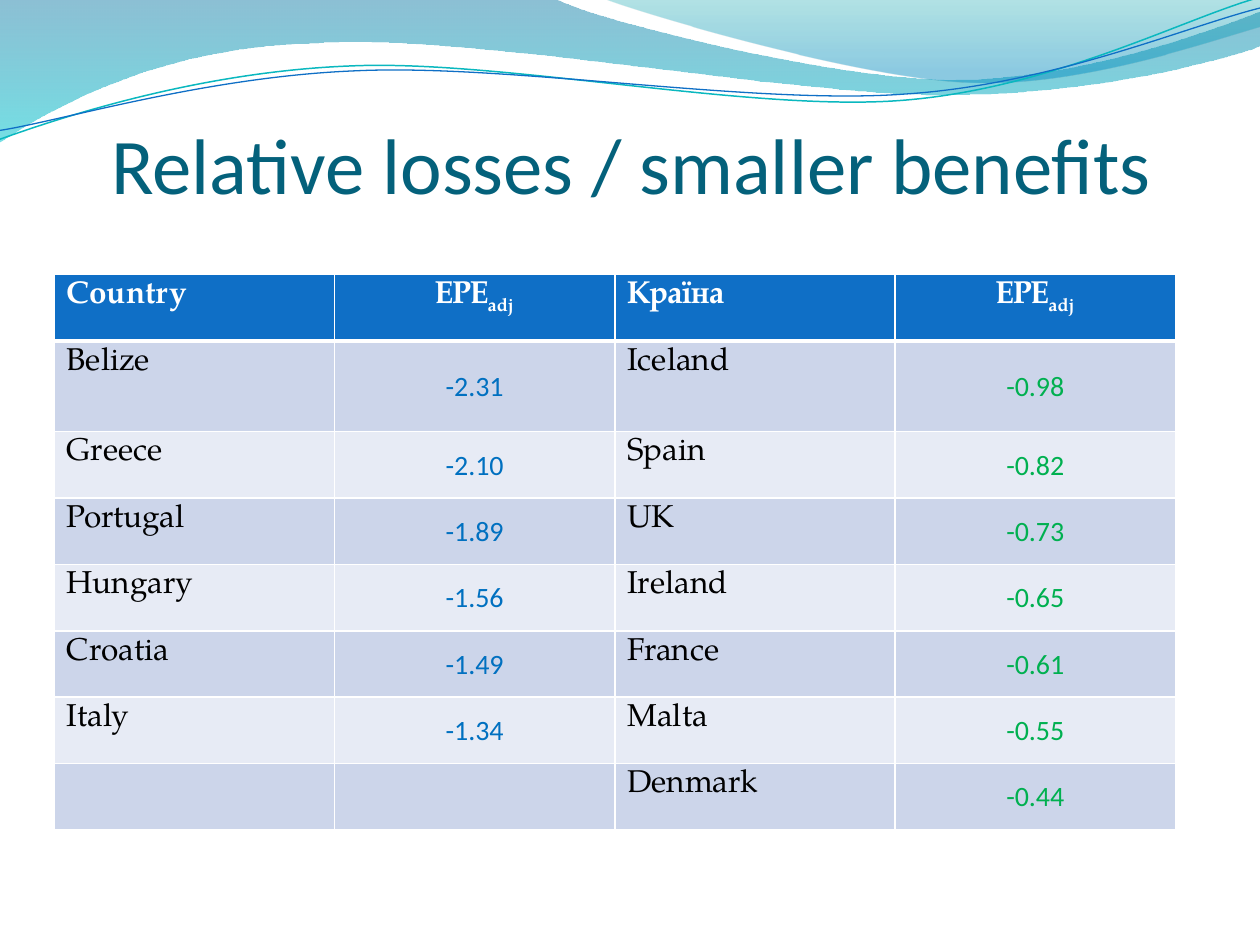
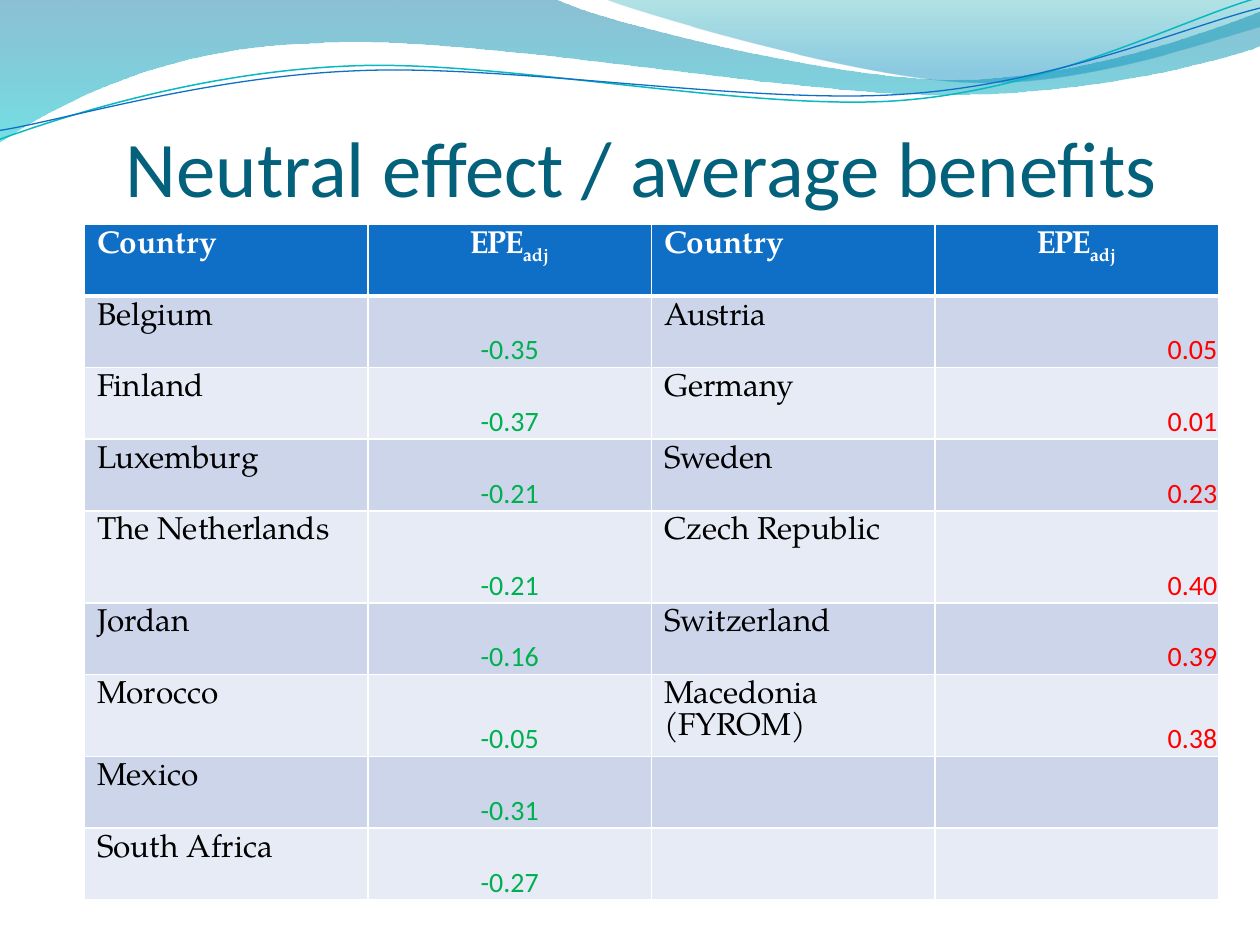
from dataclasses import dataclass

import pptx
import pptx.dml.color
import pptx.enum.text
import pptx.oxml
import pptx.oxml.ns
import pptx.slide
import pptx.table
import pptx.util
from pptx.util import Inches, Pt

ALIGN = pptx.enum.text.PP_ALIGN
ANCHOR = pptx.enum.text.MSO_ANCHOR
qn = pptx.oxml.ns.qn
Point = tuple[float, float]


@dataclass(frozen=True)
class Theme:
    title: str = "04617B"
    header: str = "0F6FC6"
    bands: tuple[str, str] = ("CCD5EA", "E7EBF5")
    white: str = "FFFFFF"
    black: str = "000000"
    blue: str = "0070C0"
    green: str = "00B050"
    red: str = "FF0000"
    teal: str = "0AB8BF"
    sans: str = "Calibri"
    serif: str = "TeX Gyre Pagella"
    title_size: int = 45
    label_size: int = 18
    value_size: int = 16


THEME = Theme()


@dataclass(frozen=True)
class Stop:
    position: float
    colour: str
    opacity: int


@dataclass(frozen=True)
class Wave:
    """Each segment holds one point for a line or three for a cubic curve."""
    start: Point
    segments: list[list[Point]]
    stops: tuple[Stop, ...] = ()
    line: str = ""
    weight: float = 0
    rotation: float = 0


@dataclass(frozen=True)
class Panel:
    """A country column and its value column."""
    heading: str
    colour: str
    align: ALIGN
    rows: list[tuple[str, str]]


@dataclass(frozen=True)
class CountrySlide:
    title: str
    title_box: tuple[float, float, float, float]
    table_box: tuple[float, float, float, float]
    rows_height: float
    tall_row: int
    tall_height: float
    row_count: int
    anchor: ANCHOR
    panels: list[Panel]


# Waves shared by the slides
WAVES = [
    Wave((0, 0), [
        [(4.4, -0.01)],
        [(4.76, 0.17), (6.64, 0.63), (7.58, 0.63)],
        [(8.53, 0.63), (9.58, 0.26), (10, 0.09)],
        [(10.01, 0.36)],
        [(9.83, 0.44), (8.7, 0.76), (7.46, 0.75)],
        [(6.22, 0.75), (3.82, 0.28), (2.57, 0.34)],
        [(1.29, 0.36), (0.46, 0.83), (-0.01, 1.13)],
        [(0, 0)],
    ], stops=(Stop(0, "0074A1", 45), Stop(1, "00C6CF", 55))),
    Wave((4.79, -0.01), [
        [(5.09, 0.11), (6.82, 0.62), (7.69, 0.65)],
        [(8.56, 0.69), (9.61, 0.32), (10, 0.21)],
        [(10, 0)],
        [(4.79, -0.01)],
    ], stops=(Stop(0, "00A1A9", 30), Stop(0.8, "008BBF", 45))),
    Wave((-0.02, 0.87), [
        [(0.47, 0.72), (1.58, 0.41), (2.78, 0.42)],
        [(3.96, 0.42), (5.91, 0.93), (7.12, 0.9)],
        [(8.32, 0.87), (9.4, 0.36), (10, 0.22)],
    ], line=THEME.teal, weight=0.85, rotation=357.3),
    Wave((-0.02, 0.8), [
        [(0.46, 0.75), (1.64, 0.45), (2.83, 0.46)],
        [(4.03, 0.46), (5.96, 0.88), (7.16, 0.85)],
        [(8.35, 0.83), (9.42, 0.42), (10.02, 0.3)],
    ], line=THEME.header, weight=0.75, rotation=357.3),
]

# Slide contents
SLIDES = [
    CountrySlide(
        "Relative losses / smaller benefits", (0.51, 1.15, 9, 0.52),
        (0.43, 2.18, 8.9, 4.41), 4.41, 1, 0.72, 8, ANCHOR.MIDDLE,
        [
            Panel("Country", THEME.blue, ALIGN.CENTER, [
                ("Belize", "-2.31"), ("Greece", "-2.10"), ("Portugal", "-1.89"),
                ("Hungary", "-1.56"), ("Croatia", "-1.49"), ("Italy", "-1.34"),
            ]),
            Panel("Країна", THEME.green, ALIGN.CENTER, [
                ("Iceland", "-0.98"), ("Spain", "-0.82"), ("UK", "-0.73"),
                ("Ireland", "-0.65"), ("France", "-0.61"), ("Malta", "-0.55"),
                ("Denmark", "-0.44"),
            ]),
        ]),
    CountrySlide(
        "Neutral effect / average benefits", (0.59, 0.92, 9, 0.77),
        (0.67, 1.78, 9, 5.41), 5.28, 4, 0.73, 9, ANCHOR.BOTTOM,
        [
            Panel("Country", THEME.green, ALIGN.CENTER, [
                ("Belgium", "-0.35"), ("Finland", "-0.37"), ("Luxemburg", "-0.21"),
                ("The Netherlands", "-0.21"), ("Jordan", "-0.16"),
                ("Morocco", "-0.05"), ("Mexico", "-0.31"), ("South Africa", "-0.27"),
            ]),
            Panel("Country", THEME.red, ALIGN.RIGHT, [
                ("Austria", "0.05"), ("Germany", "0.01"), ("Sweden", "0.23"),
                ("Czech Republic", "0.40"), ("Switzerland", "0.39"),
                ("Macedonia (FYROM)", "0.38"),
            ]),
        ]),
]


def rgb(colour: str) -> pptx.dml.color.RGBColor:
    return pptx.dml.color.RGBColor.from_string(colour)


def format_runs(p, font: str, size: int, colour: str, bold: bool = False) -> None:
    for r in p.runs:
        r.font.name = font
        r.font.size = Pt(size)
        r.font.bold = bold
        r.font.color.rgb = rgb(colour)


# Waves
def bend_segments(sp, segments: list[list[Point]]) -> None:
    """Turn each run of three line points into one cubic curve."""
    lines = iter(list(sp._element.iter(qn("a:lnTo"))))
    for segment in segments:
        steps = [next(lines) for _ in segment]
        if len(steps) == 3:
            curve = pptx.oxml.parse_xml(
                f'<a:cubicBezTo {pptx.oxml.ns.nsdecls("a")}/>')
            steps[0].addprevious(curve)
            for step in steps:
                curve.append(step[0])
                step.getparent().remove(step)


def draw_wave(s: pptx.slide.Slide, wave: Wave) -> None:
    points = [wave.start] + [pt for segment in wave.segments for pt in segment]
    emu = [(Inches(x), Inches(y)) for x, y in points]
    builder = s.shapes.build_freeform(*emu[0])
    builder.add_line_segments(emu[1:], close=bool(wave.stops))
    sp = builder.convert_to_shape()
    bend_segments(sp, wave.segments)
    sp.rotation = wave.rotation
    sp.shadow.inherit = False
    if not wave.stops:
        sp.fill.background()
        sp.line.color.rgb = rgb(wave.line)
        sp.line.width = Pt(wave.weight)
        return
    sp.line.fill.background()
    sp.fill.gradient()
    sp.fill.gradient_angle = 270
    for target, stop in zip(sp.fill.gradient_stops, wave.stops):
        target.position = stop.position
        target.color.rgb = rgb(stop.colour)
    gradient = sp._element.spPr.find(qn("a:gradFill"))
    for clr, stop in zip(gradient.iter(qn("a:srgbClr")), wave.stops):
        clr.append(pptx.oxml.parse_xml(
            f'<a:alpha {pptx.oxml.ns.nsdecls("a")} val="{stop.opacity * 1000}"/>'))


# Title
def draw_title(s: pptx.slide.Slide, text: str, box: tuple[float, ...]) -> None:
    tf = s.shapes.add_textbox(*map(Inches, box)).text_frame
    tf.word_wrap = True
    tf.vertical_anchor = ANCHOR.BOTTOM
    tf.margin_left = tf.margin_right = tf.margin_bottom = 0
    tf.margin_top = Inches(0.05)
    tf.text = text
    p = tf.paragraphs[0]
    p.alignment = ALIGN.CENTER
    format_runs(p, THEME.sans, THEME.title_size, THEME.title)


# Table
def style_cell(cell: pptx.table._Cell, row: int) -> None:
    cell.fill.solid()
    cell.fill.fore_color.rgb = rgb(THEME.bands[(row - 1) % 2] if row else THEME.header)
    tcPr = cell._tc.get_or_add_tcPr()
    heavy = {0: "B", 1: "T"}.get(row)
    for i, side in enumerate("LRTB"):
        width = Pt(3 if side == heavy else 1)
        tcPr.insert(i, pptx.oxml.parse_xml(
            f'<a:ln{side} {pptx.oxml.ns.nsdecls("a")} w="{width}"><a:solidFill>'
            f'<a:srgbClr val="{THEME.white}"/></a:solidFill></a:ln{side}>'))


def fill_header(label: pptx.table._Cell, value: pptx.table._Cell, heading: str) -> None:
    label.text_frame.text = heading
    p = value.text_frame.paragraphs[0]
    p.text = "ЕРЕ"
    p.alignment = ALIGN.CENTER
    r = p.add_run()
    r.text = "adj"
    r.font._element.set("baseline", "-25000")
    for cell in (label, value):
        format_runs(cell.text_frame.paragraphs[0], THEME.serif, THEME.label_size,
                    THEME.white, bold=True)


def fill_label(cell: pptx.table._Cell, text: str) -> None:
    cell.margin_bottom = 0
    p = cell.text_frame.paragraphs[0]
    p.text = text
    format_runs(p, THEME.serif, THEME.label_size, THEME.black)


def fill_value(cell: pptx.table._Cell, text: str, panel: Panel, anchor: ANCHOR) -> None:
    cell.vertical_anchor = anchor
    cell.margin_left = cell.margin_right = cell.margin_top = Inches(0.01)
    cell.margin_bottom = 0
    p = cell.text_frame.paragraphs[0]
    p.text = text
    p.alignment = panel.align
    format_runs(p, THEME.sans, THEME.value_size, panel.colour)


def draw_table(s: pptx.slide.Slide, content: CountrySlide) -> None:
    columns = 2 * len(content.panels)
    table = s.shapes.add_table(
        content.row_count, columns, *map(Inches, content.table_box)).table
    for column in table.columns:
        column.width = Inches(content.table_box[2] / columns)
    even_height = (content.rows_height - content.tall_height) / (content.row_count - 1)
    for i, row in enumerate(table.rows):
        row.height = Inches(content.tall_height if i == content.tall_row else even_height)
        for cell in row.cells:
            style_cell(cell, i)
    for i, panel in enumerate(content.panels):
        left = 2 * i
        fill_header(table.cell(0, left), table.cell(0, left + 1), panel.heading)
        for row, (country, value) in enumerate(panel.rows, 1):
            fill_label(table.cell(row, left), country)
            fill_value(table.cell(row, left + 1), value, panel, content.anchor)


def main() -> None:
    prs = pptx.Presentation()
    prs.slide_width = Inches(10)
    prs.slide_height = Inches(7.5)
    for content in SLIDES:
        s = prs.slides.add_slide(prs.slide_layouts[6])
        for wave in WAVES:
            draw_wave(s, wave)
        draw_title(s, content.title, content.title_box)
        draw_table(s, content)
    prs.save("out.pptx")


if __name__ == "__main__":
    main()
